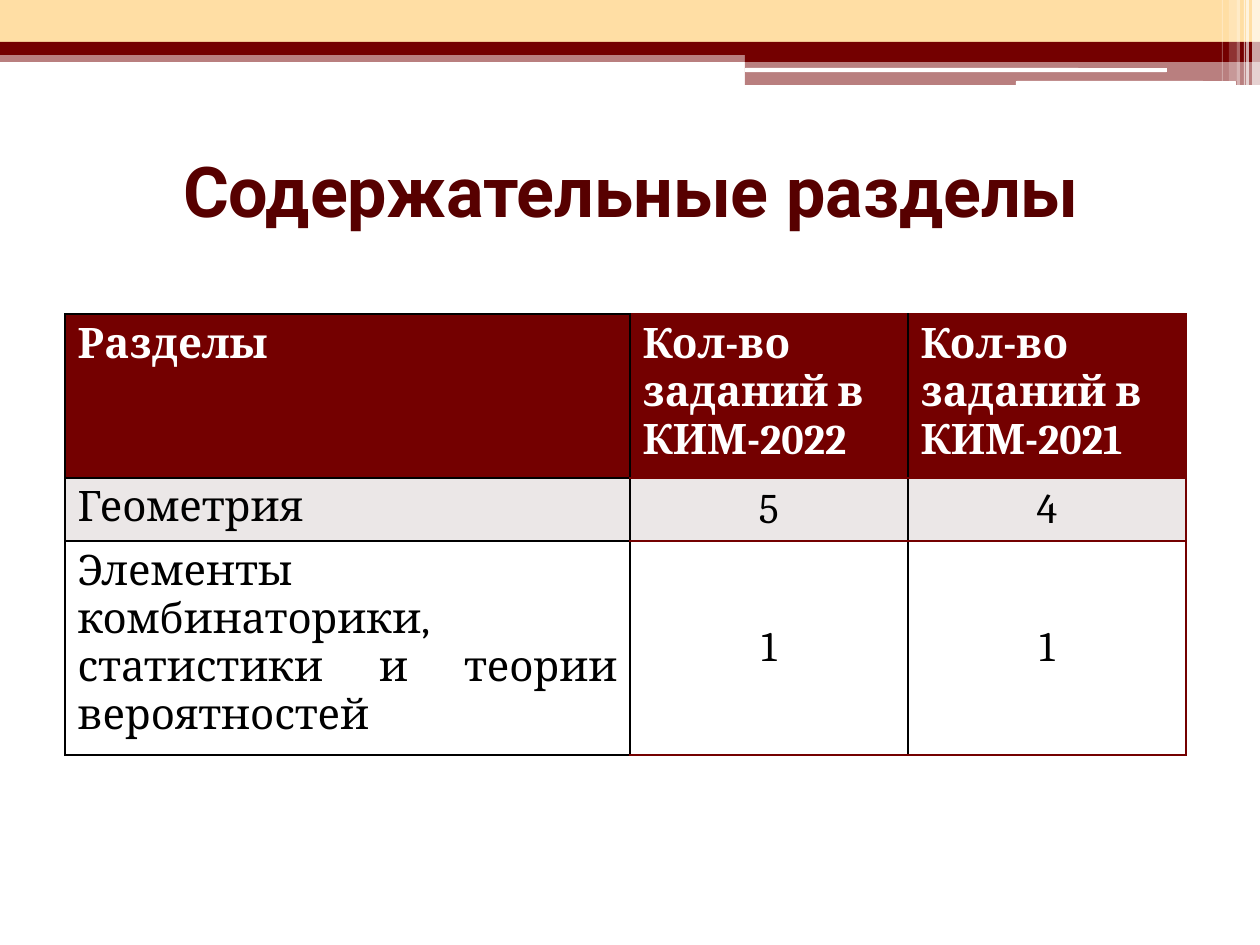
from dataclasses import dataclass

from lxml import etree
from pptx import Presentation
from pptx import util as u
from pptx.dml import color
from pptx.enum import shapes, text
from pptx.oxml import ns

EMU_PER_PX = 914400 / 126
SLIDE_WIDTH, SLIDE_HEIGHT = 1260, 945


@dataclass(frozen=True)
class Theme:
    maroon: str = "740000"
    title: str = "570000"
    sand: str = "FFDEA4"
    white: str = "FFFFFF"
    black: str = "000000"
    band: str = "EBE7E7"
    title_font: str = "Roboto"
    body_font: str = "Cambria"
    title_size: int = 40
    body_size: int = 24


THEME = Theme()


@dataclass(frozen=True)
class Bar:
    left: int
    top: int
    width: int
    height: int
    fill: str
    opacity: int = 100
    rounded: bool = False


@dataclass(frozen=True)
class Row:
    height: int
    fill: str
    font_color: str
    bold: bool
    label_align: text.PP_ALIGN
    count_align: text.PP_ALIGN
    count_anchor: text.MSO_ANCHOR
    cells: tuple[str, ...]


BARS = (
    Bar(0, 50, SLIDE_WIDTH, 12, THEME.maroon, 50),
    Bar(0, 0, SLIDE_WIDTH, 42, THEME.sand),
    Bar(0, 42, SLIDE_WIDTH, 13, THEME.maroon),
    Bar(745, 49, 515, 13, THEME.maroon),
    Bar(745, 61, 515, 24, THEME.maroon, 50),
    Bar(745, 68, 422, 4, THEME.white, rounded=True),
    Bar(1016, 81, 220, 5, THEME.white, rounded=True),
    Bar(1252, 0, 8, 86, THEME.white, 65),
    Bar(1246, 0, 3, 86, THEME.white, 65),
    Bar(1244, 0, 1, 86, THEME.white, 60),
    Bar(1237, 0, 3, 86, THEME.white, 40),
    Bar(1229, 0, 8, 81, THEME.white, 20),
    Bar(1222, 0, 1, 81, THEME.white, 30),
)

ALIGN, ANCHOR = text.PP_ALIGN, text.MSO_ANCHOR
COLUMN_WIDTHS = (565, 278, 278)
ROWS = (
    Row(157, THEME.maroon, THEME.white, True, ALIGN.LEFT, ALIGN.LEFT, ANCHOR.TOP,
        ("Разделы", "Кол-во\nзаданий в КИМ-2022", "Кол-во заданий в КИМ-2021")),
    Row(61, THEME.band, THEME.black, False, ALIGN.JUSTIFY, ALIGN.CENTER, ANCHOR.MIDDLE,
        ("Геометрия", "5", "4")),
    Row(206, THEME.white, THEME.black, False, ALIGN.JUSTIFY, ALIGN.CENTER, ANCHOR.MIDDLE,
        ("Элементы комбинаторики,\nстатистики и теории вероятностей", "1", "1")),
)


def px(length: int) -> u.Emu:
    return u.Emu(round(length * EMU_PER_PX))


def rgb(value: str) -> color.RGBColor:
    return color.RGBColor.from_string(value)


def write_text(frame, content: str, align: text.PP_ALIGN, font_color: str,
               font_format: dict) -> None:
    """Write one paragraph for each line of content."""
    frame.word_wrap = True
    for index, line in enumerate(content.split("\n")):
        para = frame.paragraphs[0] if index == 0 else frame.add_paragraph()
        para.alignment = align
        span = para.add_run()
        span.text = line
        for name, value in font_format.items():
            setattr(span.font, name, value)
        span.font.color.rgb = rgb(font_color)


def draw_bar(page, bar: Bar) -> None:
    kind = shapes.MSO_SHAPE.ROUNDED_RECTANGLE if bar.rounded else shapes.MSO_SHAPE.RECTANGLE
    shape = page.shapes.add_shape(kind, px(bar.left), px(bar.top), px(bar.width), px(bar.height))
    shape.shadow.inherit = False
    shape.line.fill.background()
    shape.fill.solid()
    shape.fill.fore_color.rgb = rgb(bar.fill)
    if bar.opacity < 100:
        tone = shape.fill._xPr.find(f".//{ns.qn('a:srgbClr')}")
        etree.SubElement(tone, ns.qn("a:alpha"), val=str(bar.opacity * 1000))


def draw_title(page) -> None:
    box = page.shapes.add_textbox(px(64), px(116), px(1134), px(147))
    box.text_frame.vertical_anchor = ANCHOR.MIDDLE
    write_text(box.text_frame, "Содержательные разделы", ALIGN.CENTER, THEME.title,
               {"name": THEME.title_font, "size": u.Pt(THEME.title_size), "bold": True})


def set_borders(cell, colors: dict[str, str]) -> None:
    properties = cell._tc.get_or_add_tcPr()
    for index, (side, value) in enumerate(colors.items()):
        line = etree.Element(ns.qn(f"a:ln{side}"), w=str(u.Pt(1)))
        fill = etree.SubElement(line, ns.qn("a:solidFill"))
        etree.SubElement(fill, ns.qn("a:srgbClr"), val=value)
        properties.insert(index, line)


def draw_table(page) -> None:
    frame = page.shapes.add_table(len(ROWS), len(COLUMN_WIDTHS), px(65), px(314),
                                  px(sum(COLUMN_WIDTHS)), px(sum(row.height for row in ROWS)))
    table = frame.table
    for column, width in zip(table.columns, COLUMN_WIDTHS):
        column.width = px(width)
    last = len(COLUMN_WIDTHS) - 1
    for row_index, row in enumerate(ROWS):
        table.rows[row_index].height = px(row.height)
        font_format = {"name": THEME.body_font, "size": u.Pt(THEME.body_size), "bold": row.bold}
        for index, content in enumerate(row.cells):
            is_label = index == 0
            cell = table.cell(row_index, index)
            cell.fill.solid()
            cell.fill.fore_color.rgb = rgb(row.fill)
            cell.vertical_anchor = ANCHOR.TOP if is_label else row.count_anchor
            write_text(cell.text_frame, content, row.label_align if is_label else row.count_align,
                       row.font_color, font_format)
            level = THEME.black if is_label else THEME.maroon
            right = THEME.maroon if index == last else THEME.black
            set_borders(cell, {"L": THEME.black, "R": right, "T": level, "B": level})


def main() -> None:
    deck = Presentation()
    deck.slide_width, deck.slide_height = px(SLIDE_WIDTH), px(SLIDE_HEIGHT)
    page = deck.slides.add_slide(deck.slide_layouts[6])
    for bar in BARS:
        draw_bar(page, bar)
    draw_title(page)
    draw_table(page)
    deck.save("out.pptx")


if __name__ == "__main__":
    main()
